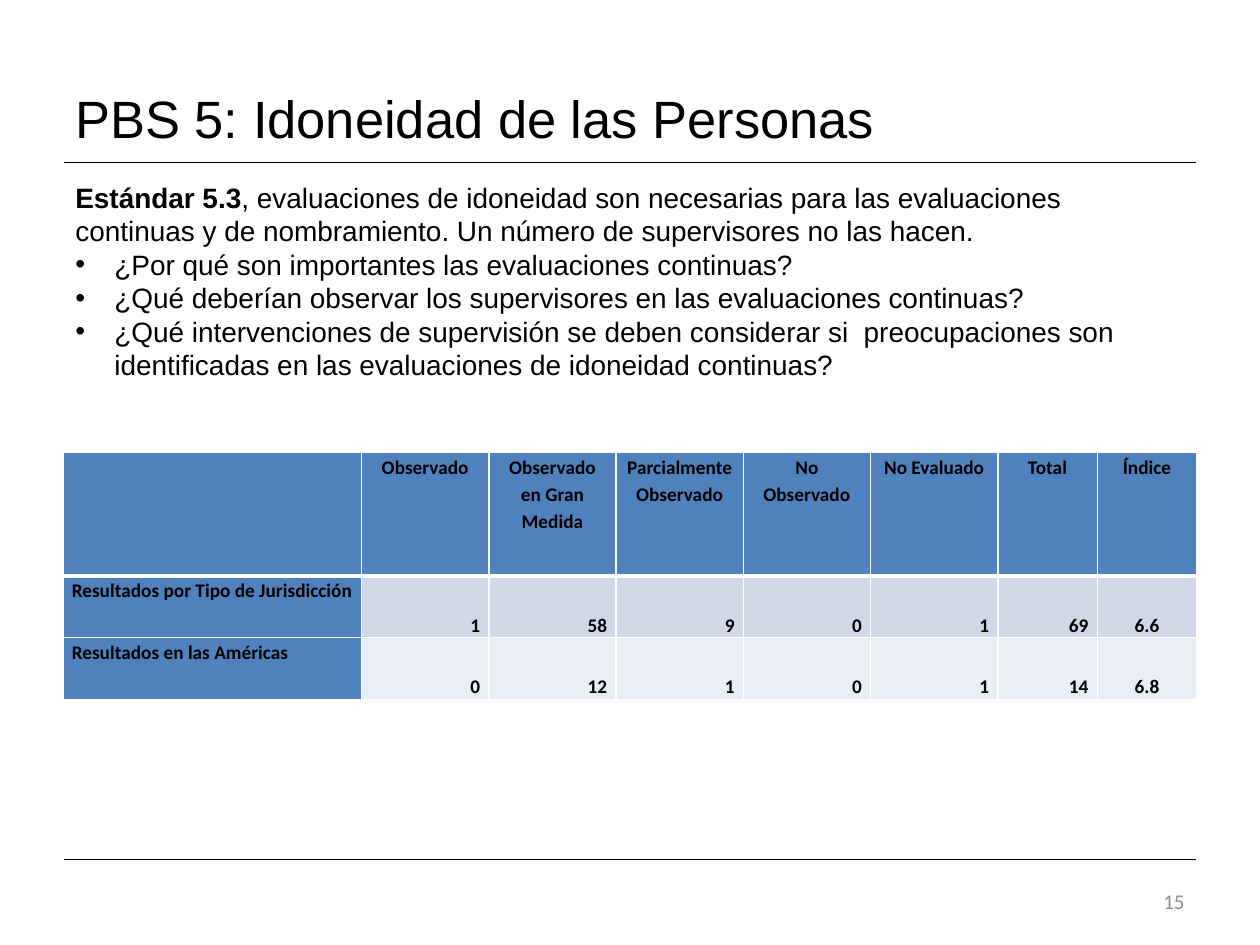
"""Build the slide on standard 5.3, suitability of persons, with its results table."""
import pptx
import pptx.dml.color
import pptx.enum.shapes
import pptx.enum.text
import pptx.oxml
import pptx.oxml.ns
import pptx.util
from pptx.util import Inches, Pt

COLORS = {"ink": "000000", "number": "8C8C8C", "head": "4F81BD",
          "odd": "D0D8E8", "even": "E9EDF4", "border": "FFFFFF"}
ALIGN = pptx.enum.text.PP_ALIGN
ANCHOR = pptx.enum.text.MSO_ANCHOR
INTRO = ("Estándar 5.3", ", evaluaciones de idoneidad son necesarias para las "
         "evaluaciones continuas y de nombramiento. Un número de supervisores no las hacen.")
QUESTIONS = [
    "¿Por qué son importantes las evaluaciones continuas?",
    "¿Qué deberían observar los supervisores en las evaluaciones continuas?",
    "¿Qué intervenciones de supervisión se deben considerar si  preocupaciones son "
    "identificadas en las evaluaciones de idoneidad continuas?",
]
RESULTS = [
    ["", "Observado", "Observado en Gran Medida", "Parcialmente Observado",
     "No Observado", "No Evaluado", "Total", "Índice"],
    ["Resultados por Tipo de Jurisdicción", "1", "58", "9", "0", "1", "69", "6.6"],
    ["Resultados en las Américas", "0", "12", "1", "0", "1", "14", "6.8"],
]
COLUMN_WIDTHS = [2.37] + [1.01] * 5 + [0.79] * 2
ROW_HEIGHTS = [0.98, 0.49, 0.49]


def rgb(name):
    return pptx.dml.color.RGBColor.from_string(COLORS[name])


def style(font, face, size, color="ink", bold=False):
    font.name, font.size, font.bold = face, Pt(size), bold
    font.color.rgb = rgb(color)


def append_xml(parent, tag, content="", attributes=""):
    namespace = pptx.oxml.ns.nsdecls("a")
    parent.append(pptx.oxml.parse_xml(
        f"<a:{tag} {namespace} {attributes}>{content}</a:{tag}>"))


def add_rule(slide, y):
    rule = slide.shapes.add_connector(pptx.enum.shapes.MSO_CONNECTOR.STRAIGHT,
                                      Inches(0.51), Inches(y), Inches(9.49), Inches(y))
    rule.line.color.rgb = rgb("ink")
    rule.line.width = Pt(0.75)
    append_xml(rule._element.spPr, "effectLst")


def add_text_frame(slide, left, top, width, height, anchor):
    frame = slide.shapes.add_textbox(
        Inches(left), Inches(top), Inches(width), Inches(height)).text_frame
    frame.word_wrap = True
    frame.vertical_anchor = anchor
    return frame


def add_line_of_text(slide, text, box, anchor, align, **look):
    line = add_text_frame(slide, *box, anchor).paragraphs[0]
    line.text = text
    line.alignment = align
    style(line.runs[0].font, **look)


def add_discussion(slide):
    frame = add_text_frame(slide, 0.5, 1.38, 8.9, 1.89, ANCHOR.TOP)
    for position, phrase in enumerate(INTRO):
        run = frame.paragraphs[0].add_run()
        run.text = phrase
        style(run.font, "Arial", 16, bold=position == 0)
    for question in QUESTIONS:
        item = frame.add_paragraph()
        item.text = question
        properties = item._p.get_or_add_pPr()
        properties.set("marL", str(Inches(0.31)))
        properties.set("indent", str(-Inches(0.31)))
        append_xml(properties, "buFont", attributes='typeface="Arial"')
        append_xml(properties, "buChar", attributes='char="•"')
        style(item.runs[0].font, "Arial", 16)


def add_borders(cell, row):
    fill = f'<a:solidFill><a:srgbClr val="{COLORS["border"]}"/></a:solidFill>'
    thick_side = {0: "lnB", 1: "lnT"}.get(row)
    for side in ("lnL", "lnR", "lnT", "lnB"):
        width = Pt(3 if side == thick_side else 1)
        append_xml(cell._tc.get_or_add_tcPr(), side, fill, f'w="{width}"')


def fill_cell(cell, text, row, column):
    is_value = row > 0 and column > 0
    add_borders(cell, row)
    cell.fill.solid()
    cell.fill.fore_color.rgb = rgb(("odd" if row % 2 else "even") if is_value else "head")
    cell.margin_left = cell.margin_right = Inches(0.07)
    cell.margin_top = cell.margin_bottom = 0
    cell.vertical_anchor = ANCHOR.BOTTOM if is_value else ANCHOR.TOP
    entry = cell.text_frame.paragraphs[0]
    entry.text = text
    entry.line_spacing = 1.15
    if is_value:
        entry.space_after = Pt(10)
    if row == 0 or column == len(COLUMN_WIDTHS) - 1:
        entry.alignment = ALIGN.CENTER
    else:
        entry.alignment = ALIGN.RIGHT if is_value else ALIGN.LEFT
    for run in entry.runs:
        style(run.font, "Calibri", 11, bold=True)


def add_results(slide):
    results = slide.shapes.add_table(
        len(RESULTS), len(COLUMN_WIDTHS), Inches(0.5), Inches(3.59),
        Inches(sum(COLUMN_WIDTHS)), Inches(sum(ROW_HEIGHTS))).table
    for column, width in zip(results.columns, COLUMN_WIDTHS):
        column.width = Inches(width)
    for row, height in zip(results.rows, ROW_HEIGHTS):
        row.height = Inches(height)
    for row, entries in enumerate(RESULTS):
        for column, text in enumerate(entries):
            fill_cell(results.cell(row, column), text, row, column)


def main():
    deck = pptx.Presentation()
    deck.slide_width, deck.slide_height = Inches(10), Inches(7.5)
    slide = deck.slides.add_slide(deck.slide_layouts[6])
    for y in (6.82, 1.29):
        add_rule(slide, y)
    add_line_of_text(slide, "15", (7.17, 6.95, 2.33, 0.4), ANCHOR.MIDDLE, ALIGN.RIGHT,
                     face="Calibri", size=12, color="number")
    add_line_of_text(slide, "PBS 5: Idoneidad de las Personas", (0.5, 0.3, 9, 0.93),
                     ANCHOR.BOTTOM, ALIGN.LEFT, face="Arial", size=30)
    add_discussion(slide)
    add_results(slide)
    deck.save("out.pptx")


if __name__ == "__main__":
    main()
